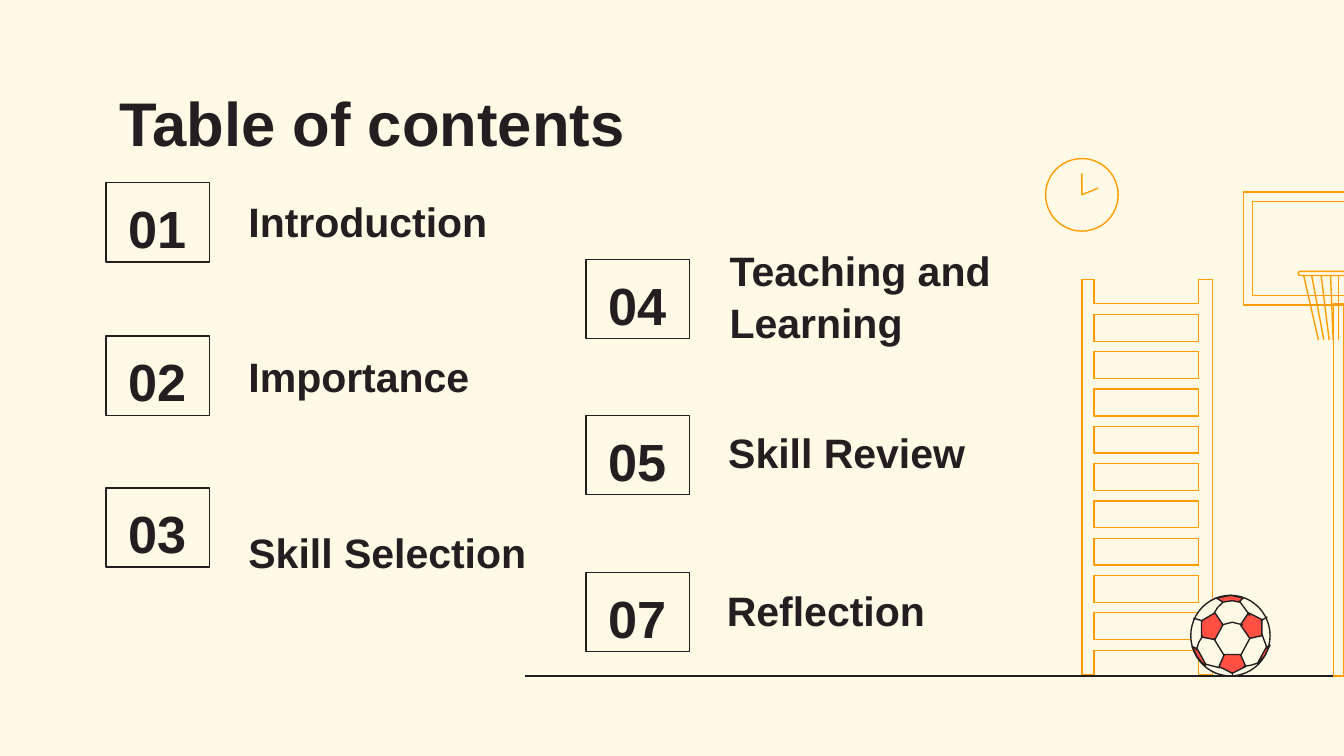
"""Build the table of contents slide with its line drawing of a gym."""
import pptx
import pptx.dml.color
import pptx.enum.shapes
import pptx.enum.text
import pptx.oxml.ns
import pptx.util
from lxml import etree

CM_PER_INCH = 2.54
CREAM, INK, ORANGE, RED = "FFFAE6", "231F20", "FF9D00", "FF5043"
SHAPE = pptx.enum.shapes.MSO_SHAPE
ANCHOR = pptx.enum.text.MSO_ANCHOR
ALIGN = pptx.enum.text.PP_ALIGN

TITLE = "Table of contents"
BOX_W, BOX_H, LABEL_W = 0.77, 0.59, 2.41
# number, box left, box top, label, label left, label top, label height
ITEMS = [
    ("01", 0.79, 1.36, "Introduction", 1.75, 1.40, 0.53),
    ("02", 0.79, 2.50, "Importance", 1.75, 2.55, 0.53),
    ("03", 0.79, 3.63, "Skill Selection", 1.75, 3.46, 0.93),
    ("04", 4.36, 1.93, "Teaching and Learning", 5.33, 1.78, 0.90),
    ("05", 4.36, 3.09, "Skill Review", 5.32, 3.12, 0.53),
    ("07", 4.36, 4.26, "Reflection", 5.31, 4.29, 0.53),
]
FLOOR = (3.91, 5.03, 10, 5.03)
BACKBOARD = [(9.25, 1.43, 1.42, 0.84), (9.32, 1.5, 1.29, 0.7)]
RIM = (9.66, 2.02, 0.6, 0.03)
POLE = (9.92, 2.26, 0.08, 2.77)
NET_TOP, NET_BOTTOM = 2.05, 2.53
NET = [(9.7, 9.81), (9.76, 9.85), (9.83, 9.89), (9.9, 9.92), (9.96, 9.96)]
LADDER = [(8.14, 2.08), (8.14, 2.26), (8.92, 2.26), (8.92, 2.08), (9.02, 2.08),
          (9.02, 5.02), (8.92, 5.02), (8.92, 4.84), (8.14, 4.84), (8.14, 5.02),
          (8.05, 5.02), (8.05, 2.08)]
GAPS, GAP_TOP, GAP_PITCH = 9, 2.34, 0.2775
CLOCK = (7.78, 1.18, 0.54, 0.54)
HANDS = [(8.05, 1.29), (8.05, 1.45), (8.17, 1.4)]
BALL = (8.86, 4.43, 0.59, 0.6)
PATCHES = [
    [(9.04, 4.56), (8.94, 4.62), (8.94, 4.74), (9.04, 4.76), (9.1, 4.65)],
    [(9.29, 4.56), (9.23, 4.65), (9.3, 4.75), (9.39, 4.73), (9.39, 4.61)],
    [(9.11, 4.87), (9.07, 4.96), (9.17, 5.01), (9.27, 4.96), (9.23, 4.87)],
    [(9.45, 4.8), (9.42, 4.82), (9.36, 4.93), (9.36, 4.94), (9.41, 4.88)],
    [(9.16, 4.43), (9.05, 4.45), (9.1, 4.48), (9.17, 4.47), (9.22, 4.48), (9.25, 4.45)],
    [(8.87, 4.81), (8.91, 4.89), (8.97, 4.96), (8.97, 4.94), (8.91, 4.83)],
]
SEAMS = [
    [(9.1, 4.48), (9.06, 4.52), (9.03, 4.57)],
    [(8.88, 4.6), (8.95, 4.62)],
    [(8.95, 4.73), (8.92, 4.78), (8.9, 4.84)],
    [(9.03, 4.75), (9.11, 4.88)],
    [(8.96, 4.94), (9.08, 4.97)],
    [(9.17, 5), (9.17, 5.03)],
    [(9.37, 4.93), (9.31, 4.95), (9.25, 4.96)],
    [(9.3, 4.75), (9.23, 4.88)],
    [(9.39, 4.72), (9.43, 4.83)],
    [(9.43, 4.59), (9.38, 4.62)],
    [(9.22, 4.47), (9.3, 4.58)],
    [(9.09, 4.65), (9.17, 4.63), (9.25, 4.65)],
]


def cm(inches):
    return pptx.util.Cm(inches * CM_PER_INCH)


def rgb(color):
    return pptx.dml.color.RGBColor.from_string(color)


def style(sp, line, fill=None):
    sp.shadow.inherit = False
    if fill:
        sp.fill.solid()
        sp.fill.fore_color.rgb = rgb(fill)
    else:
        sp.fill.background()
    sp.line.color.rgb = rgb(line)
    sp.line.width = pptx.util.Pt(0.75)
    return sp


def add_preset(s, kind, frame, line, fill=None):
    return style(s.shapes.add_shape(kind, *map(cm, frame)), line, fill)


def add_outline(s, points, line, fill=None, close=True):
    start, *rest = [(cm(x), cm(y)) for x, y in points]
    builder = s.shapes.build_freeform(*start)
    builder.add_line_segments(rest, close=close)
    return style(builder.convert_to_shape(), line, fill)


def add_line(s, x1, y1, x2, y2, color):
    cxn = s.shapes.add_connector(
        pptx.enum.shapes.MSO_CONNECTOR.STRAIGHT, cm(x1), cm(y1), cm(x2), cm(y2))
    cxn.line.color.rgb = rgb(color)
    cxn.line.width = pptx.util.Pt(0.75)
    etree.SubElement(cxn._element.spPr, pptx.oxml.ns.qn("a:effectLst"))


def put_text(sp, text, size, anchor, align=ALIGN.LEFT, top=0.1, bottom=0.1):
    tf = sp.text_frame
    tf.word_wrap = True
    tf.auto_size = pptx.enum.text.MSO_AUTO_SIZE.NONE
    tf.vertical_anchor = anchor
    tf.margin_left = tf.margin_right = cm(0.1)
    tf.margin_top, tf.margin_bottom = cm(top), cm(bottom)
    p = tf.paragraphs[0]
    p.text = text
    p.alignment = align
    p.font.name = "Arial"
    p.font.size = pptx.util.Pt(size)
    p.font.bold = True
    p.font.color.rgb = rgb(INK)
    return p


def draw_gym(s):
    add_line(s, *FLOOR, INK)
    for frame in BACKBOARD:
        add_preset(s, SHAPE.RECTANGLE, frame, ORANGE)
    rim = add_preset(s, SHAPE.ROUNDED_RECTANGLE, RIM, ORANGE)
    rim.adjustments[0] = 0.5
    for top_x, bottom_x in NET:
        add_line(s, top_x, NET_TOP, bottom_x, NET_BOTTOM, ORANGE)
    add_preset(s, SHAPE.RECTANGLE, POLE, ORANGE)
    add_outline(s, LADDER, ORANGE)
    for i in range(GAPS):
        frame = (8.14, GAP_TOP + i * GAP_PITCH, 0.78, 0.2)
        add_preset(s, SHAPE.RECTANGLE, frame, ORANGE)
    add_preset(s, SHAPE.OVAL, CLOCK, ORANGE)
    add_outline(s, HANDS, ORANGE, close=False)


def draw_ball(s):
    add_preset(s, SHAPE.OVAL, BALL, INK, CREAM)
    for points in PATCHES:
        add_outline(s, points, INK, RED)
    for points in SEAMS:
        add_outline(s, points, INK, close=False)


def main():
    prs = pptx.Presentation()
    prs.slide_width, prs.slide_height = cm(10), cm(5.625)
    s = prs.slides.add_slide(prs.slide_layouts[5])
    s.background.fill.solid()
    s.background.fill.fore_color.rgb = rgb(CREAM)

    title = s.shapes.title
    title.left, title.top, title.width, title.height = map(cm, (0.79, 0.53, 8.43, 0.63))
    put_text(title, TITLE, 33, ANCHOR.TOP, bottom=0)

    draw_gym(s)
    draw_ball(s)
    for number, x, y, label, label_x, label_y, label_h in ITEMS:
        box = add_preset(s, SHAPE.RECTANGLE, (x, y, BOX_W, BOX_H), INK)
        put_text(box, number, 28, ANCHOR.MIDDLE, ALIGN.CENTER, top=0.08, bottom=0)
        sp = s.shapes.add_textbox(*map(cm, (label_x, label_y, LABEL_W, label_h)))
        put_text(sp, label, 22, ANCHOR.BOTTOM).line_spacing = 1.06
    prs.save("out.pptx")


if __name__ == "__main__":
    main()
